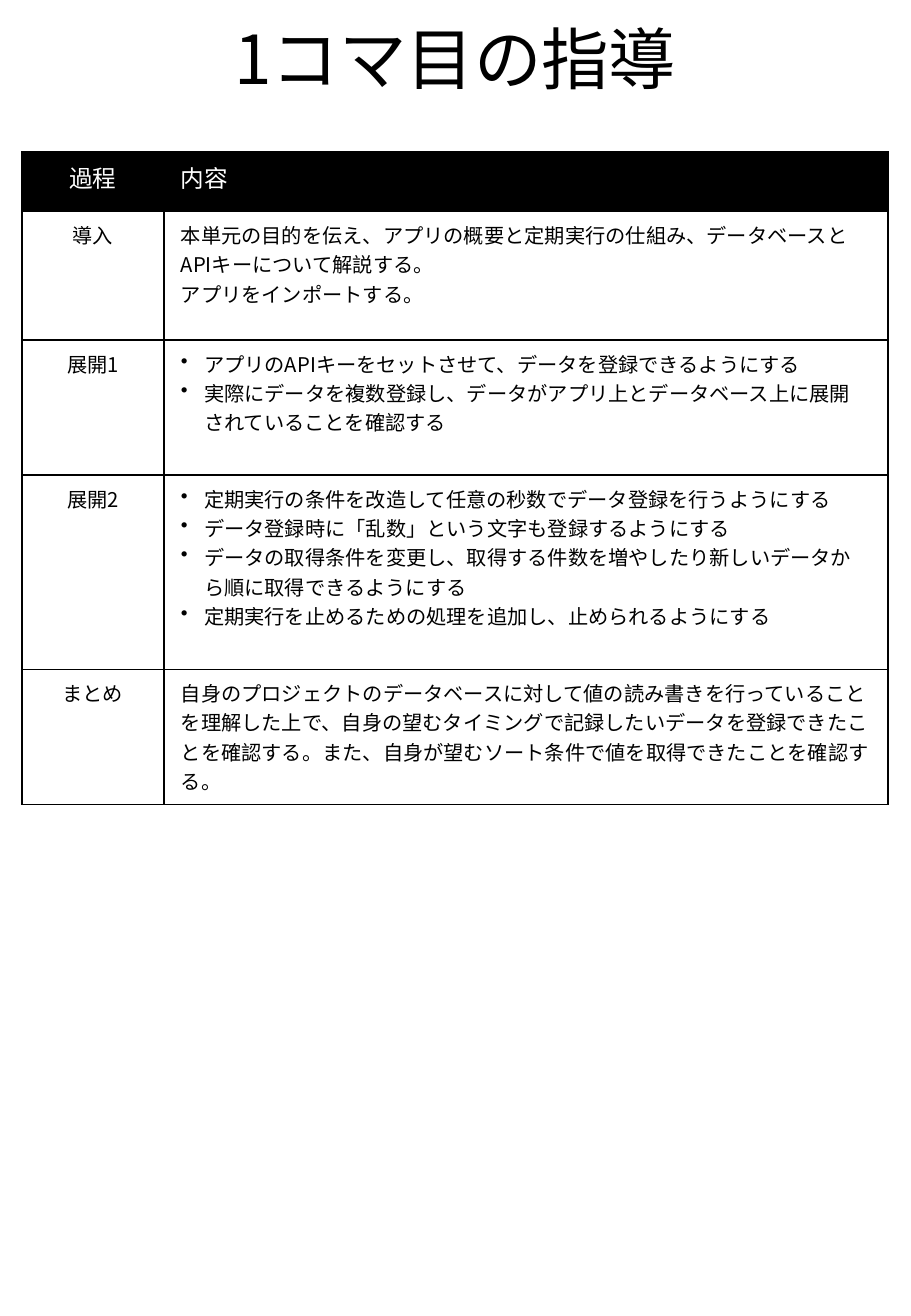
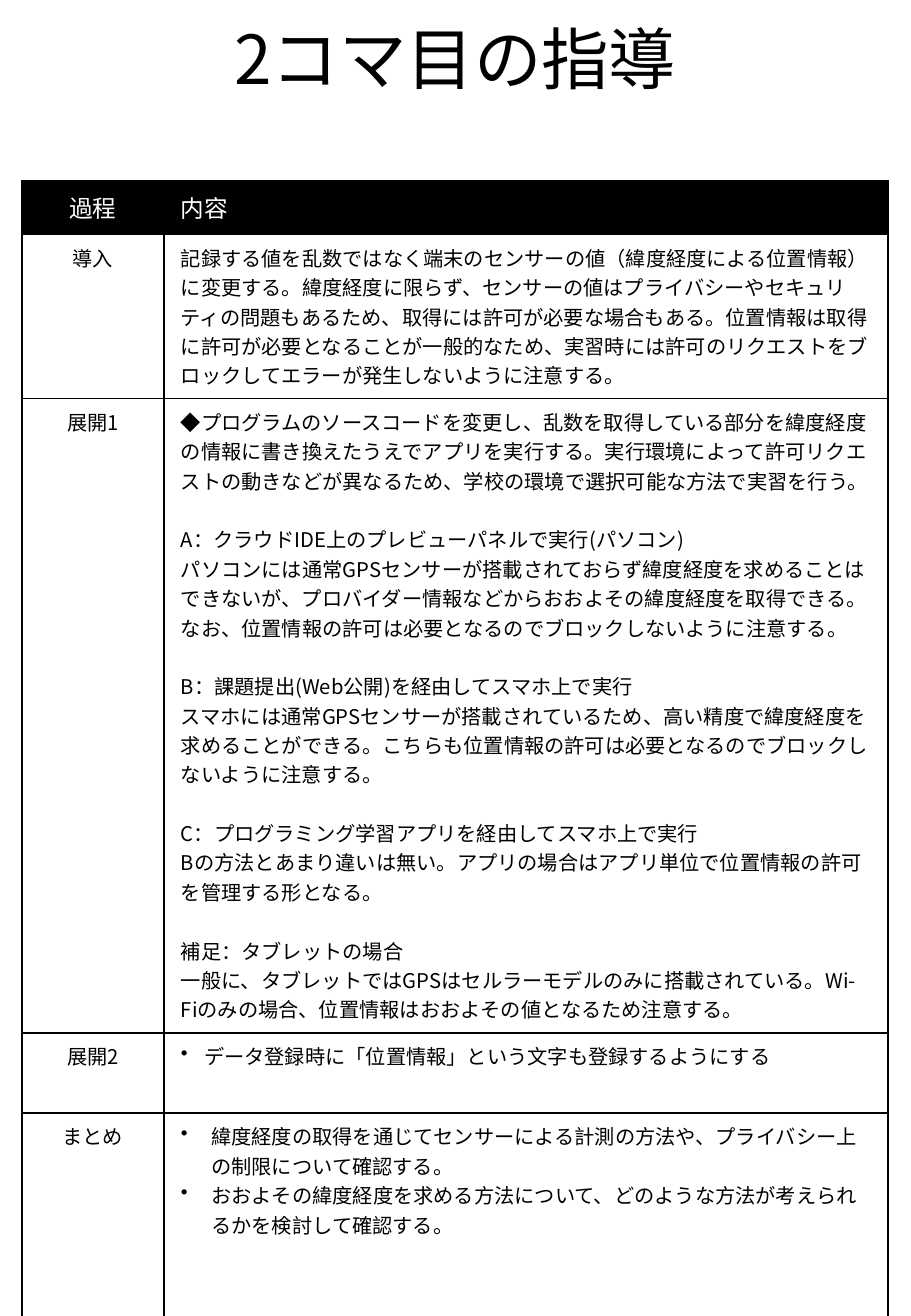
from dataclasses import dataclass

from lxml import etree
from pptx import Presentation
from pptx import util as u
from pptx.dml.color import RGBColor
from pptx.enum import text
from pptx.oxml import ns

EMU_PER_PX = 9144


def px(length: int) -> u.Emu:
    return u.Emu(length * EMU_PER_PX)


@dataclass(frozen=True)
class Theme:
    font: str = "Noto Sans CJK JP"
    ink: str = "000000"
    paper: str = "FFFFFF"
    title_size: int = 40
    header_size: int = 14
    body_size: int = 12
    section_gap: float = 17.4
    border: int = 1


@dataclass(frozen=True)
class Line:
    text: str
    indent: int = 0
    starts_section: bool = False


@dataclass(frozen=True)
class Stage:
    name: str
    height: int
    lines: tuple[Line, ...]


@dataclass(frozen=True)
class Lesson:
    title: str
    table_top: int
    header_height: int
    stages: tuple[Stage, ...]


THEME = Theme()
SLIDE_SIZE = (750, 1083)
TITLE_BOX = (56, 6, 638, 81)
TABLE_LEFT = 18
COLUMN_WIDTHS = (117, 596)
CELL_MARGIN_X, CELL_MARGIN_Y = 14, 7
HEADINGS = ("過程", "内容")


def bullets(*items: str, indent: int = 19) -> tuple[Line, ...]:
    return tuple(Line(item, indent) for item in items)


LESSONS = (
    Lesson("1コマ目の指導", 125, 49, (
        Stage("導入", 106, (
            Line("本単元の目的を伝え、アプリの概要と定期実行の仕組み、データベースとAPIキーについて解説する。"),
            Line("アプリをインポートする。"),
        )),
        Stage("展開1", 111, bullets(
            "アプリのAPIキーをセットさせて、データを登録できるようにする",
            "実際にデータを複数登録し、データがアプリ上とデータベース上に展開されていることを確認する",
        )),
        Stage("展開2", 160, bullets(
            "定期実行の条件を改造して任意の秒数でデータ登録を行うようにする",
            "データ登録時に「乱数」という文字も登録するようにする",
            "データの取得条件を変更し、取得する件数を増やしたり新しいデータから順に取得できるようにする",
            "定期実行を止めるための処理を追加し、止められるようにする",
        )),
        Stage("まとめ", 111, (
            Line("自身のプロジェクトのデータベースに対して値の読み書きを行っていることを理解した上で、"
                 "自身の望むタイミングで記録したいデータを登録できたことを確認する。"
                 "また、自身が望むソート条件で値を取得できたことを確認する。"),
        )),
    )),
    Lesson("2コマ目の指導", 149, 44, (
        Stage("導入", 135, (
            Line("記録する値を乱数ではなく端末のセンサーの値（緯度経度による位置情報）に変更する。"
                 "緯度経度に限らず、センサーの値はプライバシーやセキュリティの問題もあるため、"
                 "取得には許可が必要な場合もある。位置情報は取得に許可が必要となることが一般的なため、"
                 "実習時には許可のリクエストをブロックしてエラーが発生しないように注意する。"),
        )),
        Stage("展開1", 522, (
            Line("◆プログラムのソースコードを変更し、乱数を取得している部分を緯度経度の情報に書き換えたうえで"
                 "アプリを実行する。実行環境によって許可リクエストの動きなどが異なるため、"
                 "学校の環境で選択可能な方法で実習を行う。"),
            Line("A：クラウドIDE上のプレビューパネルで実行(パソコン)", starts_section=True),
            Line("パソコンには通常GPSセンサーが搭載されておらず緯度経度を求めることはできないが、"
                 "プロバイダー情報などからおおよその緯度経度を取得できる。"
                 "なお、位置情報の許可は必要となるのでブロックしないように注意する。"),
            Line("B：課題提出(Web公開)を経由してスマホ上で実行", starts_section=True),
            Line("スマホには通常GPSセンサーが搭載されているため、高い精度で緯度経度を求めることができる。"
                 "こちらも位置情報の許可は必要となるのでブロックしないように注意する。"),
            Line("C：プログラミング学習アプリを経由してスマホ上で実行", starts_section=True),
            Line("Bの方法とあまり違いは無い。アプリの場合はアプリ単位で位置情報の許可を管理する形となる。"),
            Line("補足：タブレットの場合", starts_section=True),
            Line("一般に、タブレットではGPSはセルラーモデルのみに搭載されている。"
                 "Wi-Fiのみの場合、位置情報はおおよその値となるため注意する。"),
        )),
        Stage("展開2", 66, bullets("データ登録時に「位置情報」という文字も登録するようにする")),
        Stage("まとめ", 176, bullets(
            "緯度経度の取得を通じてセンサーによる計測の方法や、プライバシー上の制限について確認する。",
            "おおよその緯度経度を求める方法について、どのような方法が考えられるかを検討して確認する。",
            indent=25,
        )),
    )),
)


def write_paragraph(paragraph, content: str, size: int, color: str, centered: bool = False) -> None:
    run = paragraph.add_run()
    run.text = content
    paragraph.alignment = text.PP_ALIGN.CENTER if centered else text.PP_ALIGN.LEFT
    for font in (paragraph.font, run.font):
        font.name = THEME.font
        font.size = u.Pt(size)
        font.bold = False
        font.color.rgb = RGBColor.from_string(color)


def add_bullet(paragraph, indent: int) -> None:
    properties = paragraph._p.get_or_add_pPr()
    properties.set("marL", str(px(indent)))
    properties.set("indent", str(-px(indent)))
    etree.SubElement(properties, ns.qn("a:buChar"), char="•")


def add_borders(cell) -> None:
    properties = cell._tc.get_or_add_tcPr()
    for side in ("lnL", "lnR", "lnT", "lnB"):
        line = etree.SubElement(properties, ns.qn(f"a:{side}"), w=str(u.Pt(THEME.border)))
        fill = etree.SubElement(line, ns.qn("a:solidFill"))
        etree.SubElement(fill, ns.qn("a:srgbClr"), val=THEME.ink)


def write_cell(cell, lines: tuple[Line, ...], centered: bool, header: bool = False) -> None:
    add_borders(cell)
    cell.fill.solid()
    cell.fill.fore_color.rgb = RGBColor.from_string(THEME.ink if header else THEME.paper)
    cell.margin_left = cell.margin_right = px(CELL_MARGIN_X)
    cell.margin_top = cell.margin_bottom = px(CELL_MARGIN_Y)
    cell.vertical_anchor = text.MSO_ANCHOR.TOP
    size = THEME.header_size if header else THEME.body_size
    color = THEME.paper if header else THEME.ink
    frame = cell.text_frame
    for index, line in enumerate(lines):
        paragraph = frame.add_paragraph() if index else frame.paragraphs[0]
        if line.indent:
            add_bullet(paragraph, line.indent)
        if line.starts_section:
            paragraph.space_before = u.Pt(THEME.section_gap)
        write_paragraph(paragraph, line.text, size, color, centered)


def write_title(slide, content: str) -> None:
    title = slide.shapes.title
    title.left, title.top, title.width, title.height = map(px, TITLE_BOX)
    frame = title.text_frame
    frame.auto_size = text.MSO_AUTO_SIZE.NONE
    frame.vertical_anchor = text.MSO_ANCHOR.BOTTOM
    paragraph = frame.paragraphs[0]
    paragraph.line_spacing = 0.9
    write_paragraph(paragraph, content, THEME.title_size, THEME.ink, centered=True)


def add_plan_table(slide, lesson: Lesson) -> None:
    heights = (lesson.header_height, *(stage.height for stage in lesson.stages))
    table = slide.shapes.add_table(
        len(heights), len(COLUMN_WIDTHS), px(TABLE_LEFT), px(lesson.table_top),
        px(sum(COLUMN_WIDTHS)), px(sum(heights)),
    ).table
    table.horz_banding = False
    for column, width in zip(table.columns, COLUMN_WIDTHS):
        column.width = px(width)
    for row, height in zip(table.rows, heights):
        row.height = px(height)
    for column, heading in enumerate(HEADINGS):
        write_cell(table.cell(0, column), (Line(heading),), centered=column == 0, header=True)
    for row, stage in enumerate(lesson.stages, start=1):
        write_cell(table.cell(row, 0), (Line(stage.name),), centered=True)
        write_cell(table.cell(row, 1), stage.lines, centered=False)


def set_east_asian_font(slide) -> None:
    for latin in list(slide.element.iter(ns.qn("a:latin"))):
        latin.addnext(etree.Element(ns.qn("a:ea"), typeface=THEME.font))


def add_lesson(presentation, lesson: Lesson) -> None:
    slide = presentation.slides.add_slide(presentation.slide_layouts[0])
    subtitle = slide.placeholders[1].element
    subtitle.getparent().remove(subtitle)
    write_title(slide, lesson.title)
    add_plan_table(slide, lesson)
    set_east_asian_font(slide)


def main() -> None:
    presentation = Presentation()
    presentation.slide_width, presentation.slide_height = map(px, SLIDE_SIZE)
    for lesson in LESSONS:
        add_lesson(presentation, lesson)
    presentation.save("out.pptx")


if __name__ == "__main__":
    main()
